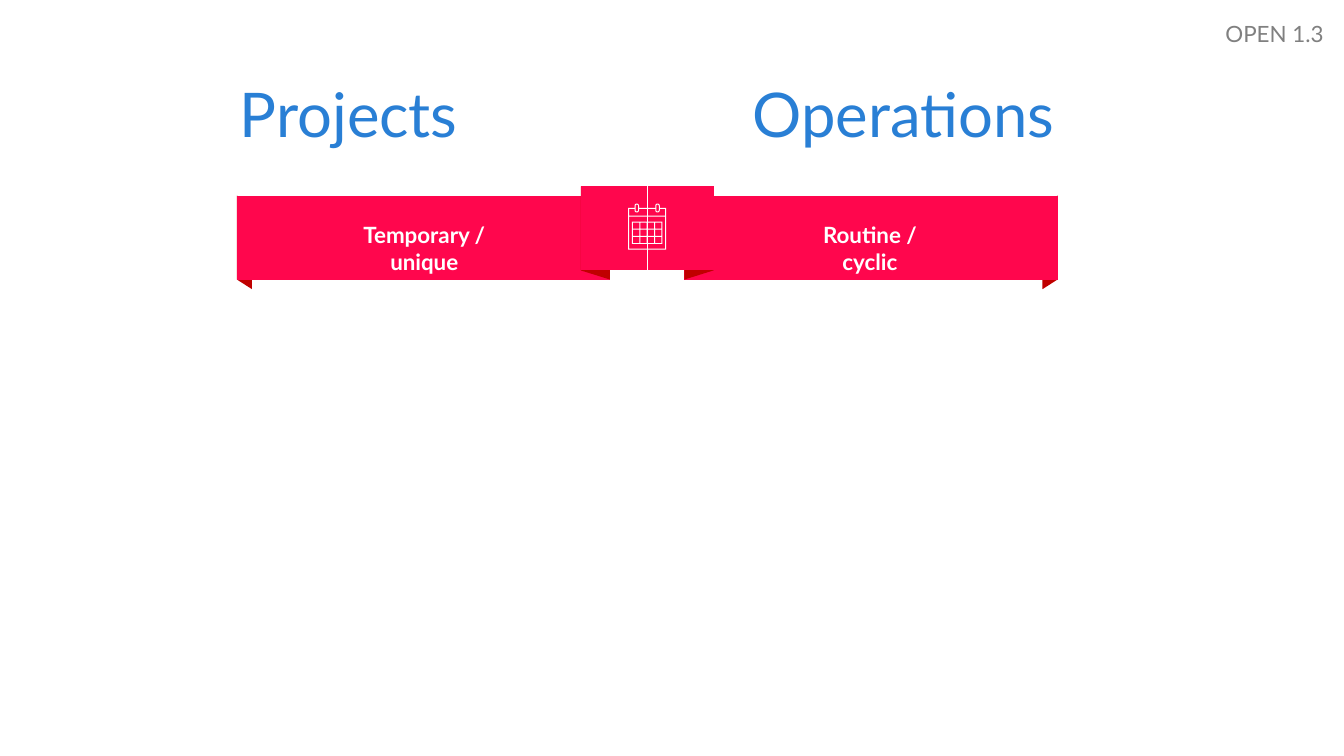
import math
from dataclasses import dataclass

import pptx
import pptx.dml.color
import pptx.enum.text
import pptx.util

Pt = pptx.util.Pt
Align = pptx.enum.text.PP_ALIGN
Point = tuple[float, float]

COLORS = {"blue": "297FD5", "red": "FF064D", "dark": "C00000",
          "white": "FFFFFF", "gray": "808080"}
FONT = "Lato"
CENTER = 462.3

# Ribbon edges, as distances from the center line
SEAM, INNER, CAP, FOLD, OUTER = 0.25, 26.6, 47.4, 282.3, 293.1
CAP_TOP, CAP_BOTTOM = 133.2, 193.2
BAND_TOP, BAND_BOTTOM = 139.7, 199.7
FOLD_TOP, FOLD_BOTTOM = 146.2, 206.6


@dataclass
class Label:
    text: str
    left: float
    top: float
    width: float
    height: float
    size: float
    color: str
    align: Align
    bold: bool = False
    anchor: pptx.enum.text.MSO_ANCHOR = pptx.enum.text.MSO_ANCHOR.TOP
    line_spacing: float = 1.0
    side_inset: float = 7.2
    top_inset: float = 3.6


@dataclass
class RibbonPart:
    color: str
    points: list[Point]


TITLE = {"top": 31.7, "height": 104.4, "size": 44, "color": "blue",
         "anchor": pptx.enum.text.MSO_ANCHOR.MIDDLE, "line_spacing": 0.9}
CAPTION = {"top": 150.5, "height": 34, "size": 16, "color": "white",
           "align": Align.CENTER, "bold": True, "side_inset": 18, "top_inset": 7.2}

LABELS = [
    Label("Projects", left=164.2, width=191.5, align=Align.LEFT, **TITLE),
    Label("Operations", left=388.8, width=371.5, align=Align.RIGHT, **TITLE),
    Label("Temporary / unique", left=220.3, width=165.6, **CAPTION),
    Label("Routine / cyclic", left=553, width=136.8, **CAPTION),
    Label("OPEN 1.3", 851, 10.8, 101.5, 26.6, 16, "gray", Align.RIGHT),
]


def rectangle(left: float, top: float, right: float, bottom: float) -> list[Point]:
    return [(left, top), (right, top), (right, bottom), (left, bottom)]


RIBBON_PARTS = [
    RibbonPart("dark", [(FOLD, FOLD_BOTTOM), (OUTER, BAND_BOTTOM),
                        (OUTER, BAND_TOP), (FOLD, FOLD_TOP)]),
    RibbonPart("red", rectangle(INNER, BAND_TOP, OUTER, BAND_BOTTOM)),
    RibbonPart("dark", [(INNER, BAND_BOTTOM), (CAP, CAP_BOTTOM),
                        (CAP, CAP_TOP), (INNER, BAND_TOP)]),
    RibbonPart("red", rectangle(SEAM, CAP_TOP, CAP, CAP_BOTTOM)),
]


def half_circle(x: float, y: float, radius: float, start: int) -> list[Point]:
    """Points of a clockwise half circle that begins at the angle start."""
    angles = [math.radians(start + step * 22.5) for step in range(9)]
    return [(x + radius * math.cos(a), y + radius * math.sin(a)) for a in angles]


def calendar_contours() -> list[list[Point]]:
    """Nested outlines whose overlaps alternate between filled and empty."""
    line, half, top, bottom, divider = 0.7, 13.6, 148.5, 178.3, 154.0
    ring_offset, ring_radius, ring_top, ring_low = 7.4, 1.6, 147.0, 150.2
    grid_half, grid_top, grid_bottom, columns, rows = 10.9, 158.3, 174.3, 4, 3
    left, right = CENTER - half, CENTER + half

    silhouette, header, ring_holes = [(left, top)], [(left + line, top + line)], []
    for x in (CENTER - ring_offset, CENTER + ring_offset):
        silhouette += [(x - ring_radius, top),
                       *half_circle(x, ring_top, ring_radius, 180),
                       (x + ring_radius, top)]
        header += [(x - ring_radius, top + line),
                   *reversed(half_circle(x, ring_low, ring_radius, 0)),
                   (x + ring_radius, top + line)]
        ring_holes.append(half_circle(x, ring_top, ring_radius - line, 180)
                          + half_circle(x, ring_low, ring_radius - line, 0))
    silhouette += [(right, top), (right, bottom), (left, bottom)]
    header += [(right - line, top + line), (right - line, divider),
               (left + line, divider)]
    body = rectangle(left + line, divider + line, right - line, bottom - line)
    grid_left = CENTER - grid_half
    grid = rectangle(grid_left, grid_top, CENTER + grid_half, grid_bottom)

    step_x = (2 * grid_half - line) / columns
    step_y = (grid_bottom - grid_top - line) / rows
    cells = [rectangle(grid_left + line + column * step_x,
                       grid_top + line + row * step_y,
                       grid_left + (column + 1) * step_x,
                       grid_top + (row + 1) * step_y)
             for row in range(rows) for column in range(columns)]
    return [silhouette, header, *ring_holes, body, grid, *cells]


def draw_outline(slide: pptx.slide.Slide, contours: list[list[Point]], color: str) -> None:
    scaled = [[(Pt(x), Pt(y)) for x, y in contour] for contour in contours]
    builder = slide.shapes.build_freeform(*scaled[0][0])
    for number, contour in enumerate(scaled):
        if number:
            builder.move_to(*contour[0])
        builder.add_line_segments(contour[1:], close=True)
    shape = builder.convert_to_shape()
    shape.shadow.inherit = False
    shape.fill.solid()
    shape.fill.fore_color.rgb = pptx.dml.color.RGBColor.from_string(COLORS[color])
    shape.line.fill.background()


def draw_ribbon_half(slide: pptx.slide.Slide, side: int) -> None:
    """Side is 1 for the right half and -1 for the left."""
    for part in RIBBON_PARTS:
        points = [(CENTER + side * x, y) for x, y in part.points]
        draw_outline(slide, [points], part.color)


def draw_label(slide: pptx.slide.Slide, label: Label) -> None:
    shape = slide.shapes.add_textbox(Pt(label.left), Pt(label.top),
                                     Pt(label.width), Pt(label.height))
    text_frame = shape.text_frame
    text_frame.word_wrap = True
    text_frame.vertical_anchor = label.anchor
    text_frame.margin_left = text_frame.margin_right = Pt(label.side_inset)
    text_frame.margin_top = text_frame.margin_bottom = Pt(label.top_inset)
    text_frame.text = label.text
    paragraph = text_frame.paragraphs[0]
    paragraph.alignment = label.align
    paragraph.line_spacing = label.line_spacing
    font = paragraph.runs[0].font
    font.name = FONT
    font.size = Pt(label.size)
    font.bold = label.bold
    font.color.rgb = pptx.dml.color.RGBColor.from_string(COLORS[label.color])


def main() -> None:
    presentation = pptx.Presentation()
    presentation.slide_width = Pt(960)
    presentation.slide_height = Pt(540)
    slide = presentation.slides.add_slide(presentation.slide_layouts[6])
    for side in (1, -1):
        draw_ribbon_half(slide, side)
    draw_outline(slide, calendar_contours(), "white")
    for label in LABELS:
        draw_label(slide, label)
    presentation.save("out.pptx")


if __name__ == "__main__":
    main()
